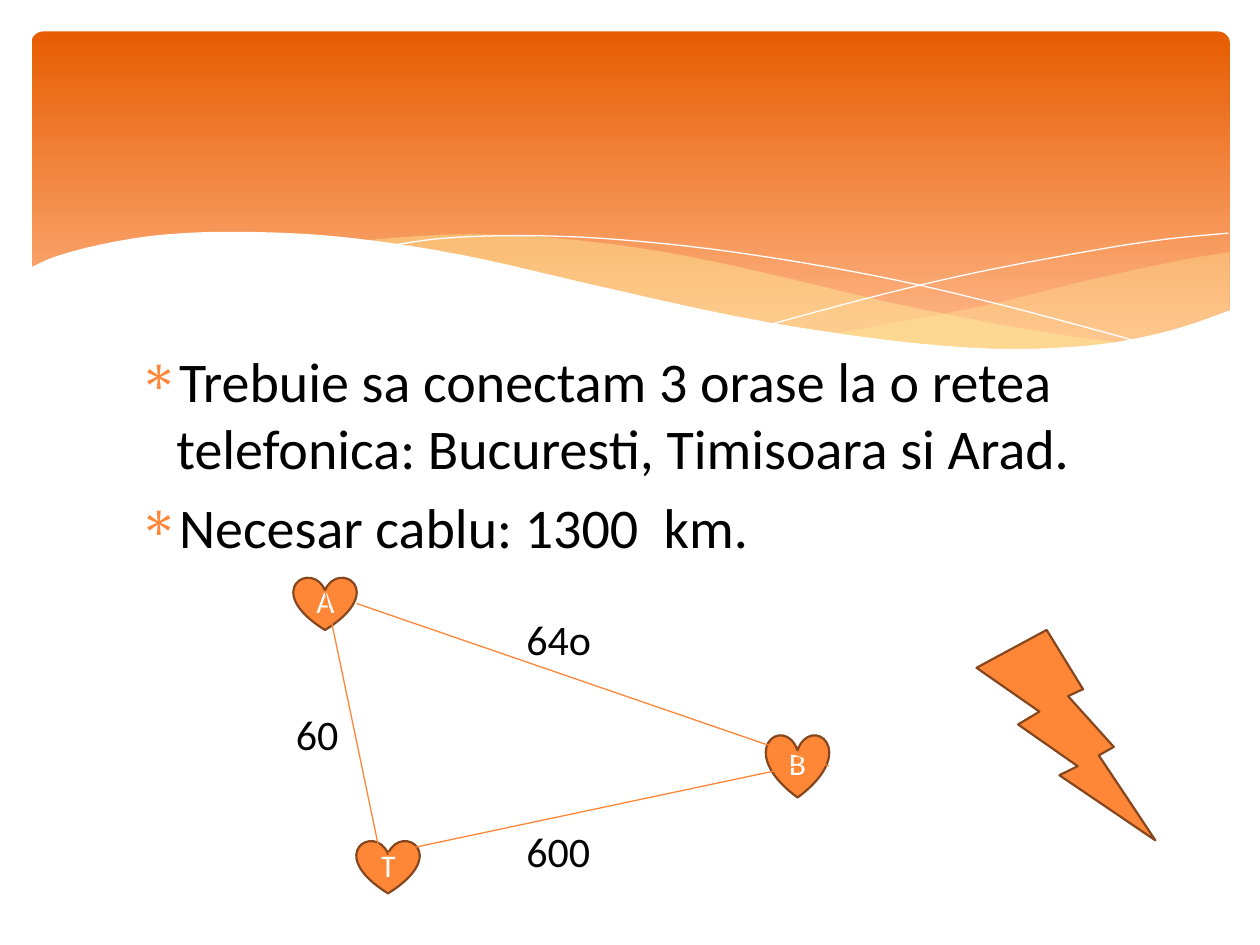
from lxml import etree
from pptx import Presentation
from pptx.dml.color import RGBColor
from pptx.enum.shapes import MSO_CONNECTOR, MSO_SHAPE
from pptx.enum.text import MSO_ANCHOR, PP_ALIGN
from pptx.oxml.ns import qn
from pptx.util import Inches, Pt

STRAIGHT = MSO_CONNECTOR.STRAIGHT
HEART, BOLT, ROUND = MSO_SHAPE.HEART, MSO_SHAPE.LIGHTNING_BOLT, MSO_SHAPE.ROUNDED_RECTANGLE
FONT = "Calibri"
COLORS = {
    "top": "E75C01", "fade": "FEB687", "glow": "FFF39D", "white": "FFFFFF",
    "main": "FE8637", "edge": "85461D", "text": "000000",
}

# Knots of the banner curves, in inches
RIGHT_TOP = [(9.76, 2), (9.35, 2.07), (8.61, 2.23), (7.79, 2.43), (6.61, 2.65)]
RIGHT_LOW = [(6.61, 2.65), (7.18, 2.73), (7.69, 2.77), (8.24, 2.77), (8.81, 2.73),
             (9.35, 2.62), (9.76, 2.47)]
MID_TOP = [(8.93, 2.73), (8.07, 2.6), (7.06, 2.4), (6.13, 2.18), (5.27, 2),
           (4.41, 1.89), (3.61, 1.86), (2.86, 1.91)]
MID_LOW = [(2.86, 1.91), (3.62, 2.03), (4.49, 2.22), (5.3, 2.4), (6.18, 2.58),
           (7.09, 2.72), (7.85, 2.78), (8.38, 2.78), (8.93, 2.73)]
LONG_LINE = [(3.09, 1.95), (3.53, 1.89), (4.16, 1.87), (4.89, 1.9), (5.82, 2),
             (6.95, 2.19), (7.95, 2.42), (9.07, 2.72)]
SHORT_LINE = [(6.13, 2.57), (6.95, 2.35), (7.76, 2.16), (8.66, 1.99), (9.24, 1.9), (9.75, 1.85)]
WAVE = [(9.77, 2.46), (9.3, 2.62), (8.75, 2.73), (8.09, 2.77), (7.44, 2.74),
        (6.68, 2.65), (5.79, 2.5), (4.75, 2.27), (3.65, 2.02), (2.71, 1.88),
        (1.93, 1.84), (1.32, 1.86), (0.85, 1.93), (0.46, 2.03), (0.23, 2.13)]
FLOOR = [(0.23, 3.29), (9.77, 3.29)]


def color(name):
    return RGBColor.from_string(COLORS[name])


def smooth(knots, steps=6):
    """Sample a Catmull-Rom spline through the knots."""
    ends = [knots[0], *knots, knots[-1]]
    points = [knots[0]]
    for a, b, c, d in zip(ends, ends[1:], ends[2:], ends[3:]):
        for step in range(1, steps + 1):
            t = step / steps
            points.append(tuple(
                (2 * q + (r - p) * t + (2 * p - 5 * q + 4 * r - s) * t ** 2
                 + (3 * q - p - 3 * r + s) * t ** 3) / 2
                for p, q, r, s in zip(a, b, c, d)))
    return points


def add_curve(shapes, points, fill=None, alpha=None):
    """Draw a filled outline, or a white hairline if no fill is named."""
    spots = [(Inches(x), Inches(y)) for x, y in points]
    maker = shapes.build_freeform(*spots[0])
    maker.add_line_segments(spots[1:], close=fill is not None)
    shape = maker.convert_to_shape()
    shape.shadow.inherit = False
    if fill is None:
        shape.fill.background()
        shape.line.color.rgb = color("white")
        shape.line.width = Pt(0)
        return
    shape.fill.solid()
    shape.fill.fore_color.rgb = color(fill)
    shape.line.fill.background()
    if alpha:
        tint = shape.fill._xPr.find(".//" + qn("a:srgbClr"))
        etree.SubElement(tint, qn("a:alpha"), val=str(alpha * 1000))


def add_banner(shapes):
    panel = shapes.add_shape(ROUND, *map(Inches, (0.25, 0.25, 9.51, 2.7)))
    panel.adjustments[0] = 0.034
    panel.shadow.inherit = False
    panel.line.fill.background()
    panel.fill.gradient()
    panel.fill.gradient_angle = 270
    for stop, name, place in zip(panel.fill.gradient_stops, ("top", "fade"), (0, 0.9)):
        stop.color.rgb = color(name)
        stop.position = place
    add_curve(shapes, smooth(RIGHT_TOP) + smooth(RIGHT_LOW), "glow", 29)
    add_curve(shapes, smooth(MID_TOP) + smooth(MID_LOW), "glow", 40)
    add_curve(shapes, smooth(LONG_LINE))
    add_curve(shapes, smooth(SHORT_LINE))
    add_curve(shapes, smooth(WAVE) + FLOOR, "white")


def style(para, size, name):
    para.font.name = FONT
    para.font.size = Pt(size)
    para.font.color.rgb = color(name)


def add_bullet(para):
    props = para._p.get_or_add_pPr()
    props.set("marL", str(Inches(0.3)))
    props.set("indent", str(Inches(-0.3)))
    tint = etree.Element(qn("a:buClr"))
    etree.SubElement(tint, qn("a:srgbClr"), val=COLORS["main"])
    font = etree.Element(qn("a:buFont"), typeface="Symbol")
    mark = etree.Element(qn("a:buChar"), char="∗")
    spot = props.find(qn("a:defRPr"))
    for item in (tint, font, mark):
        spot.addprevious(item)


def fill_body(body, lines):
    body.left, body.top, body.width, body.height = map(Inches, (1, 2.7, 8.1, 3.77))
    frame = body.text_frame
    frame.text = "\n".join(lines)
    for para in frame.paragraphs:
        style(para, 32, "text")
        para.space_before = Pt(6.4)
        add_bullet(para)


def add_icon(shapes, kind, box, text=""):
    shape = shapes.add_shape(kind, *map(Inches, box))
    shape.shadow.inherit = False
    shape.fill.solid()
    shape.fill.fore_color.rgb = color("main")
    shape.line.color.rgb = color("edge")
    shape.line.width = Pt(1.25)
    if text:
        frame = shape.text_frame
        frame.text = text
        frame.vertical_anchor = MSO_ANCHOR.MIDDLE
        frame.paragraphs[0].alignment = PP_ALIGN.CENTER
        style(frame.paragraphs[0], 18, "white")


def add_cable(shapes, start, end):
    line = shapes.add_connector(STRAIGHT, *map(Inches, start + end))
    line.line.color.rgb = color("main")
    line.line.width = Pt(0.75)
    etree.SubElement(line._element.spPr, qn("a:effectLst"))


def add_label(shapes, text, left, top, width):
    box = shapes.add_textbox(*map(Inches, (left, top, width, 0.51)))
    box.text_frame.word_wrap = True
    box.text_frame.text = text
    style(box.text_frame.paragraphs[0], 24, "text")


def main():
    deck = Presentation()
    deck.slide_width, deck.slide_height = Inches(10), Inches(7.5)
    slide = deck.slides.add_slide(deck.slide_layouts[1])
    shapes = slide.shapes
    title = shapes.title._element
    title.getparent().remove(title)
    body = slide.placeholders[1]
    add_banner(shapes)
    shapes._spTree.append(body._element)
    fill_body(body, [
        "Trebuie sa conectam 3 orase la o retea telefonica: Bucuresti, Timisoara si Arad.",
        "Necesar cablu: 1300  km.",
    ])
    for city, left, top, height in (
            ("A", 2.33, 4.58, 0.42), ("B", 6.08, 5.83, 0.5), ("T", 2.83, 6.67, 0.42)):
        add_icon(shapes, HEART, (left, top, 0.5, height), city)
    for start, end in (
            ((2.83, 4.79), (6.58, 6.08)),
            ((3.08, 6.77), (6.33, 6.08)),
            ((2.58, 4.69), (3.08, 7.08))):
        add_cable(shapes, start, end)
    add_label(shapes, "600", 4.08, 6.5, 0.75)
    add_label(shapes, "64o", 4.08, 4.82, 0.79)
    add_label(shapes, "60", 2.25, 5.57, 0.58)
    add_icon(shapes, BOLT, (7.75, 5, 1.42, 1.67))
    deck.save("out.pptx")


if __name__ == "__main__":
    main()
